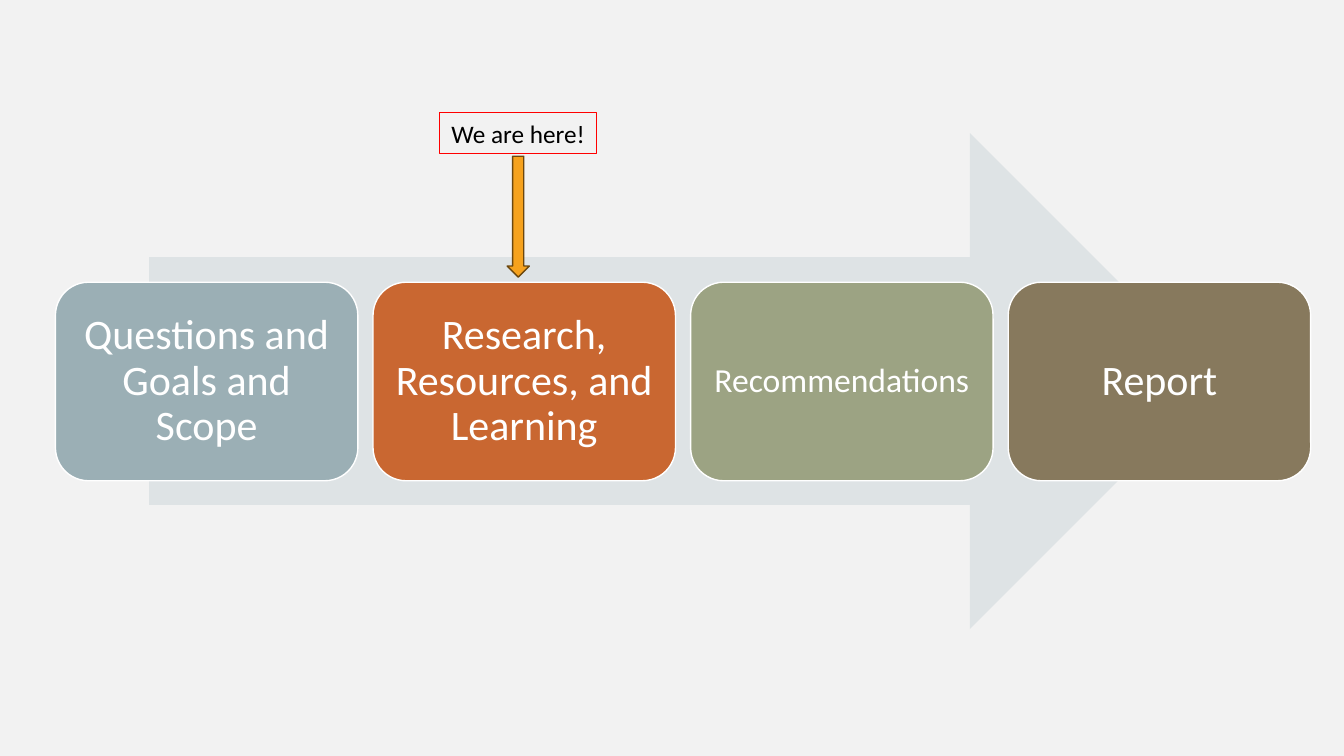
from dataclasses import dataclass

from pptx import Presentation
from pptx.dml.color import RGBColor
from pptx.enum.shapes import MSO_SHAPE
from pptx.enum.text import MSO_ANCHOR, MSO_AUTO_SIZE, PP_ALIGN
from pptx.util import Pt

EMU_PER_PX = 9144


@dataclass(frozen=True)
class Theme:
    font: str = "Calibri"
    background: str = "F2F2F2"
    process: str = "DEE3E5"
    step_text: str = "FFFFFF"
    step_line: str = "FFFFFF"
    pointer: str = "F6A21D"
    pointer_line: str = "6C470D"
    marker_text: str = "000000"
    marker_line: str = "FF0000"
    step_size: int = 30
    long_word_size: int = 24
    marker_size: int = 18


THEME = Theme()

STEPS = [
    ("Questions and Goals and Scope", "9BAFB5", THEME.step_size, 12),
    ("Research, Resources, and Learning", "C96731", THEME.step_size, 12),
    ("Recommendations", "9CA383", THEME.long_word_size, 10),
    ("Report", "87795D", THEME.step_size, 12),
]
STEP_LEFT, STEP_TOP, STEP_WIDTH, STEP_HEIGHT = 55, 280, 300, 197
STEP_PITCH = 315


def px(length):
    return length * EMU_PER_PX


def rgb(colour):
    return RGBColor.from_string(colour)


def outline(shape, colour, width):
    shape.line.color.rgb = rgb(colour)
    shape.line.width = Pt(width)


def add_block(slide, preset, box, fill, line=None):
    block = slide.shapes.add_shape(preset, *map(px, box))
    block.shadow.inherit = False
    block.fill.solid()
    block.fill.fore_color.rgb = rgb(fill)
    if line:
        outline(block, line, 1)
    else:
        block.line.fill.background()
    return block


def write(shape, text, size, colour):
    frame = shape.text_frame
    frame.word_wrap = True
    frame.text = text
    paragraph = frame.paragraphs[0]
    paragraph.alignment = PP_ALIGN.CENTER
    font = paragraph.runs[0].font
    font.name = THEME.font
    font.size = Pt(size)
    font.color.rgb = rgb(colour)
    return frame


def add_step(slide, position, label, fill, size, inset):
    box = (STEP_LEFT + position * STEP_PITCH, STEP_TOP, STEP_WIDTH, STEP_HEIGHT)
    step = add_block(slide, MSO_SHAPE.ROUNDED_RECTANGLE, box, fill, THEME.step_line)
    frame = write(step, label, size, THEME.step_text)
    frame.vertical_anchor = MSO_ANCHOR.MIDDLE
    frame.margin_left = frame.margin_right = px(inset)
    frame.margin_top = frame.margin_bottom = px(inset)
    frame.paragraphs[0].line_spacing = 0.9


def add_marker(slide, text, box):
    marker = slide.shapes.add_textbox(*map(px, box))
    outline(marker, THEME.marker_line, 0.75)
    frame = write(marker, text, THEME.marker_size, THEME.marker_text)
    frame.auto_size = MSO_AUTO_SIZE.SHAPE_TO_FIT_TEXT


def main():
    deck = Presentation()
    deck.slide_width, deck.slide_height = px(1333), px(750)
    slide = deck.slides.add_slide(deck.slide_layouts[6])
    slide.background.fill.solid()
    slide.background.fill.fore_color.rgb = rgb(THEME.background)

    add_block(slide, MSO_SHAPE.RIGHT_ARROW, (148, 132, 1060, 492), THEME.process)
    for position, step in enumerate(STEPS):
        add_step(slide, position, *step)
    add_block(slide, MSO_SHAPE.DOWN_ARROW, (503, 155, 22, 120),
              THEME.pointer, THEME.pointer_line)
    add_marker(slide, "We are here!", (436, 112, 156, 40))

    deck.save("out.pptx")


if __name__ == "__main__":
    main()
